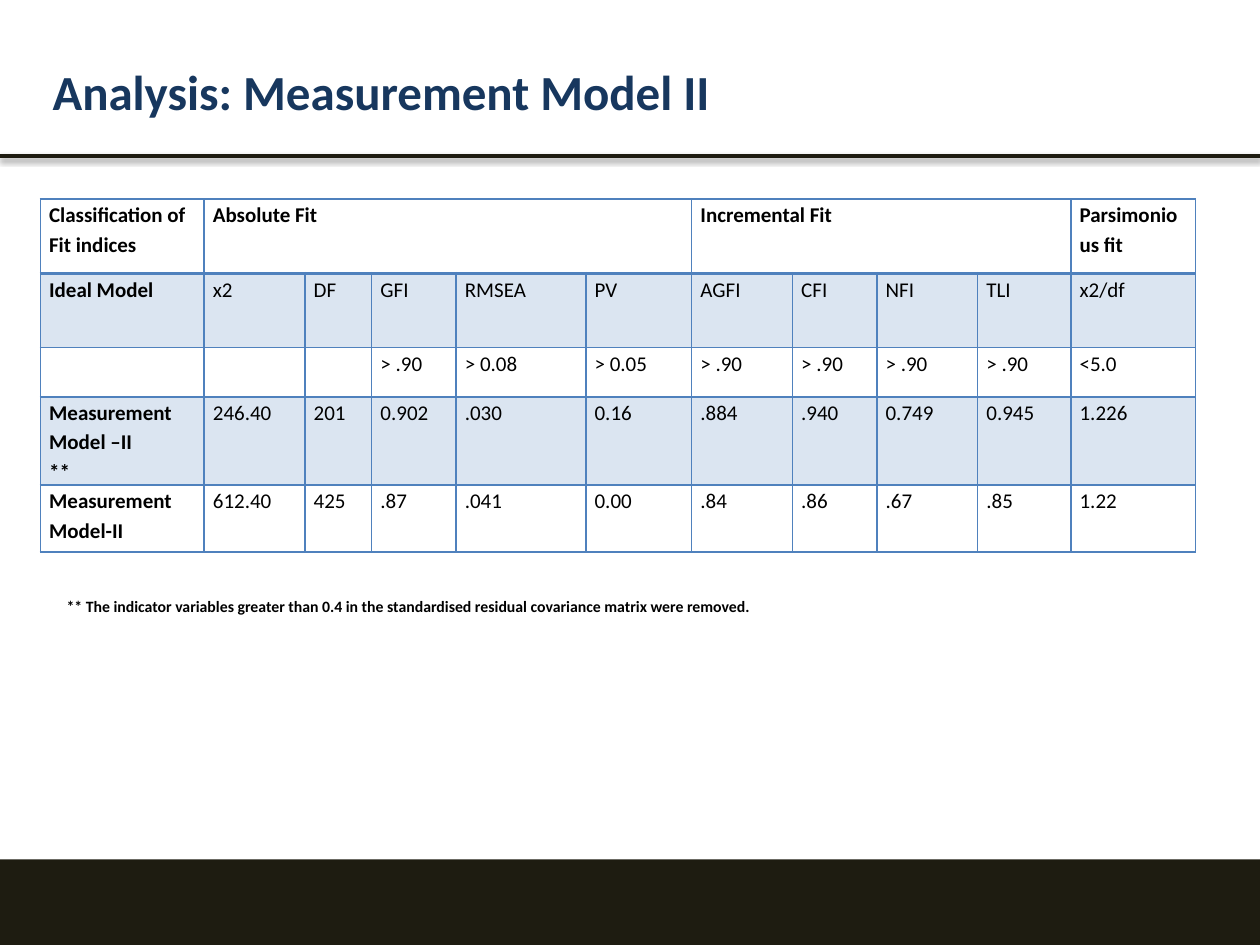
from typing import Any, NamedTuple

from lxml import etree
from pptx import Presentation
from pptx.dml.color import RGBColor
from pptx.enum.shapes import MSO_CONNECTOR, MSO_SHAPE
from pptx.enum.text import MSO_AUTO_SIZE
from pptx.oxml import parse_xml
from pptx.oxml.ns import nsdecls, qn
from pptx.util import Inches, Pt

STRAIGHT = MSO_CONNECTOR.STRAIGHT
RECT = MSO_SHAPE.RECTANGLE
GROW = MSO_AUTO_SIZE.SHAPE_TO_FIT_TEXT

DARK = RGBColor(0x1E, 0x1C, 0x11)
NAVY = RGBColor(0x17, 0x37, 0x5E)
BLACK = RGBColor(0, 0, 0)
BLUE = RGBColor(0x4F, 0x81, 0xBD)

COLS = [1.3, 0.8, 0.53, 0.67, 1.03, 0.84, 0.8, 0.67, 0.8, 0.74, 0.99]
ROWS = [0.59, 0.59, 0.39, 0.7, 0.53]
DATA = [
    ["Classification of Fit indices", "Absolute Fit", "", "", "", "",
     "Incremental Fit", "", "", "", "Parsimonious fit"],
    ["Ideal Model", "x2", "DF", "GFI", "RMSEA", "PV",
     "AGFI", "CFI", "NFI", "TLI", "x2/df"],
    ["", "", "", "> .90", "> 0.08", "> 0.05",
     "> .90", "> .90", "> .90", "> .90", "<5.0"],
    ["Measurement Model –II\n**", "246.40", "201", "0.902", ".030", "0.16",
     ".884", ".940", "0.749", "0.945", "1.226"],
    ["Measurement Model-II", "612.40", "425", ".87", ".041", "0.00",
     ".84", ".86", ".67", ".85", "1.22"],
]
SPANS = [(1, 5), (6, 9)]
BANDS = (1, 3)
INSETS = {
    "margin_left": Inches(0.07), "margin_right": Inches(0.07),
    "margin_top": 0, "margin_bottom": 0,
}


class Label(NamedTuple):
    text: str
    left: float
    top: float
    width: float
    height: float
    size: int
    color: RGBColor
    wrap: bool


LABELS = [
    Label("Analysis: Measurement Model II",
          0.32, 0.44, 5.48, 0.57, 28, NAVY, False),
    Label("** The indicator variables greater than 0.4 in the standardised "
          "residual covariance matrix were removed.",
          0.43, 4.69, 6.14, 0.25, 9, BLACK, True),
]


def apply(target: Any, values: dict[str, Any]) -> None:
    for name, value in values.items():
        setattr(target, name, value)


def style(para: Any, size: int, color: RGBColor, bold: bool) -> None:
    for run in para.runs:
        apply(run.font, {"name": "Calibri", "size": Pt(size), "bold": bold})
        run.font.color.rgb = color


def add_label(slide: Any, label: Label) -> None:
    box = slide.shapes.add_textbox(*map(Inches, label[1:5]))
    frame = box.text_frame
    apply(frame, {"text": label.text, "word_wrap": label.wrap,
                  "auto_size": GROW})
    style(frame.paragraphs[0], label.size, label.color, True)


def add_rule(slide: Any) -> None:
    """Draw the line under the title, with its soft shadow."""
    y = Inches(1.24)
    rule = slide.shapes.add_connector(STRAIGHT, 0, y, Inches(10), y)
    rule.line.color.rgb = DARK
    rule.line.width = Pt(2)
    rule._element.spPr.append(parse_xml(
        f'<a:effectLst {nsdecls("a")}><a:outerShdw blurRad="{Pt(3.1)}" '
        f'dist="{Pt(1.6)}" dir="5400000" rotWithShape="0">'
        '<a:srgbClr val="000000"><a:alpha val="38000"/></a:srgbClr>'
        '</a:outerShdw></a:effectLst>'))


def add_footer(slide: Any) -> None:
    bar = slide.shapes.add_shape(
        RECT, 0, Inches(6.82), Inches(10), Inches(0.68))
    bar.shadow.inherit = False
    bar.fill.solid()
    bar.fill.fore_color.rgb = DARK
    bar.line.fill.background()


def set_edges(cell: Any, row: int) -> None:
    """Border the cell, thicker between the header and the body."""
    widths = {"L": 1, "R": 1, "T": 2 if row == 1 else 1,
              "B": 2 if row == 0 else 1}
    props = cell._tc.get_or_add_tcPr()
    for side, width in widths.items():
        props.append(parse_xml(
            f'<a:ln{side} {nsdecls("a")} w="{Pt(width)}"><a:solidFill>'
            f'<a:srgbClr val="{BLUE}"/></a:solidFill></a:ln{side}>'))


def set_fill(cell: Any, row: int) -> None:
    """Tint the banded rows and leave the others clear."""
    if row not in BANDS:
        cell.fill.background()
        return
    cell.fill.solid()
    cell.fill.fore_color.rgb = BLUE
    color = cell._tc.tcPr.find(qn("a:solidFill"))[0]
    etree.SubElement(color, qn("a:alpha"), val="20000")


def add_grid(slide: Any) -> None:
    grid = slide.shapes.add_table(
        len(ROWS), len(COLS), Inches(0.32), Inches(1.58),
        Inches(sum(COLS)), Inches(sum(ROWS))).table
    apply(grid, {"first_row": False, "horz_banding": False})
    for col, width in zip(grid.columns, COLS):
        col.width = Inches(width)
    for line, height in zip(grid.rows, ROWS):
        line.height = Inches(height)
    for first, last in SPANS:
        grid.cell(0, first).merge(grid.cell(0, last))
    for r, texts in enumerate(DATA):
        for c, text in enumerate(texts):
            cell = grid.cell(r, c)
            apply(cell, INSETS)
            set_edges(cell, r)
            set_fill(cell, r)
            if not text:
                continue
            cell.text = text
            for para in cell.text_frame.paragraphs:
                para.line_spacing = 1.15
                style(para, 12, BLACK, r == 0 or c == 0)


def main() -> None:
    deck = Presentation()
    apply(deck, {"slide_width": Inches(10), "slide_height": Inches(7.5)})
    slide = deck.slides.add_slide(deck.slide_layouts[6])
    add_rule(slide)
    add_footer(slide)
    add_grid(slide)
    for label in LABELS:
        add_label(slide, label)
    deck.save("out.pptx")


if __name__ == "__main__":
    main()
